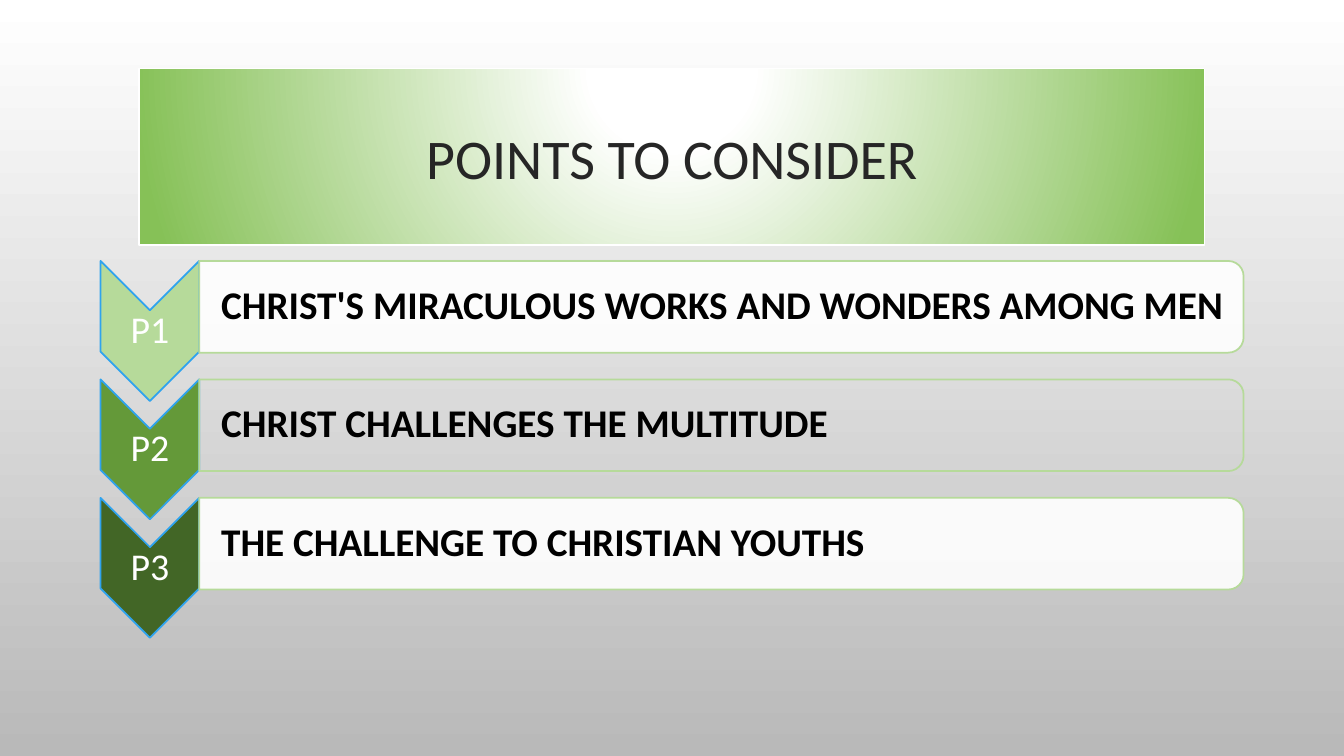
from lxml.etree import SubElement
from pptx import Presentation
from pptx.dml.color import RGBColor
from pptx.enum.shapes import MSO_SHAPE as Preset
from pptx.enum.text import MSO_ANCHOR as Anchor, MSO_AUTO_SIZE as AutoSize, PP_ALIGN as Align
from pptx.oxml import parse_xml
from pptx.oxml.ns import nsdecls, qn
from pptx.util import Pt

POINTS = [
    ("P1", "CHRIST'S MIRACULOUS WORKS AND WONDERS AMONG MEN", "B6DA9A", True),
    ("P2", "CHRIST CHALLENGES THE MULTITUDE", "649939", False),
    ("P3", "THE CHALLENGE TO CHRISTIAN YOUTHS", "426626", True),
]
ROW_PITCH = 84.6
CHEVRON_WIDTH = 70.5
CHEVRON_HEIGHT = 100
BAR_HEIGHT = 65.5
INSET = 1.4


def color(value):
    return RGBColor.from_string(value)


def outline(shape, value):
    shape.line.color.rgb = color(value)
    shape.line.width = Pt(1.25)


def write(frame, text, size, value, align, bold=False):
    frame.word_wrap = True
    frame.auto_size = AutoSize.NONE
    frame.vertical_anchor = Anchor.MIDDLE
    frame.text = text
    para = frame.paragraphs[0]
    para.alignment = align
    para.line_spacing = 0.9
    font = para.runs[0].font
    font.name, font.size, font.bold = "Calibri", Pt(size), bold
    font.color.rgb = color(value)


def add_turned(page, preset, left, top, width, height, line):
    shift = (width - height) / 2
    shape = page.shapes.add_shape(
        preset, Pt(left + shift), Pt(top - shift), Pt(height), Pt(width))
    shape.rotation = 90
    shape.shadow.inherit = False
    outline(shape, line)
    return shape


def add_text(page, left, top, width, height, text, size, value, align, bold=False, indent=INSET):
    box = page.shapes.add_textbox(Pt(left), Pt(top), Pt(width), Pt(height))
    frame = box.text_frame
    frame.margin_left = Pt(indent)
    frame.margin_right = frame.margin_top = frame.margin_bottom = Pt(INSET)
    write(frame, text, size, value, align, bold)


def paint_background(page):
    fill = page.background.fill
    fill.gradient()
    fill.gradient_angle = 270
    for stop, position, value in zip(fill.gradient_stops, (0, 1), ("FFFFFF", "B9B9B9")):
        stop.position = position
        stop.color.rgb = color(value)


def add_title_arrow(page, left, top, width, height):
    title = page.shapes.title
    title.left, title.top, title.width, title.height = Pt(left), Pt(top), Pt(width), Pt(height)
    stops = "".join(
        f'<a:gs pos="{position * 1000}"><a:srgbClr val="{value}"/></a:gs>'
        for position, value in ((0, "FFFFFF"), (15, "FFFFFF"), (100, "86C157")))
    properties = title.element.spPr
    properties.append(parse_xml(
        f'<a:prstGeom {nsdecls("a")} prst="rightArrow"><a:avLst/></a:prstGeom>'))
    properties.append(parse_xml(
        f'<a:gradFill {nsdecls("a")} rotWithShape="1"><a:gsLst>{stops}</a:gsLst>'
        '<a:path path="circle"><a:fillToRect l="50000" t="-80000" r="50000" b="180000"/>'
        '</a:path></a:gradFill>'))
    outline(title, "FFFFFF")
    write(title.text_frame, "POINTS TO CONSIDER", 40, "262626", Align.CENTER)
    title.text_frame.paragraphs[0].line_spacing = 1.0


def add_point(page, left, top, width, label, text, value, filled):
    chevron = add_turned(
        page, Preset.CHEVRON, left, top, CHEVRON_WIDTH, CHEVRON_HEIGHT, "2FA3EE")
    chevron.fill.solid()
    chevron.fill.fore_color.rgb = color(value)
    notch = CHEVRON_WIDTH / 2
    add_text(page, left, top + notch, CHEVRON_WIDTH, CHEVRON_HEIGHT - 2 * notch,
             label, 27, "FFFFFF", Align.CENTER)

    bar_left, bar_width = left + CHEVRON_WIDTH, width - CHEVRON_WIDTH
    bar = add_turned(page, Preset.ROUND_2_SAME_RECTANGLE, bar_left, top,
                     bar_width, BAR_HEIGHT, "B6DA9A")
    if filled:
        bar.fill.solid()
        bar.fill.fore_color.rgb = color("FFFFFF")
        tint = bar.element.spPr.find(qn("a:solidFill")).find(qn("a:srgbClr"))
        SubElement(tint, qn("a:alpha"), val="90000")
    else:
        bar.fill.background()
    add_text(page, bar_left, top + 3.2, bar_width - 3.2, BAR_HEIGHT - 6.4,
             text, 28, "000000", Align.LEFT, True, 15.7)


def add_points(page, left, top, width):
    for row, point in enumerate(POINTS):
        add_point(page, left, top + row * ROW_PITCH, width, *point)


def main():
    deck = Presentation()
    deck.slide_width, deck.slide_height = Pt(960), Pt(540)
    page = deck.slides.add_slide(deck.slide_layouts[5])
    paint_background(page)
    add_title_arrow(page, 99.4, 49, 761, 126)
    add_points(page, 71.8, 186.4, 816.5)
    deck.save("out.pptx")


if __name__ == "__main__":
    main()
